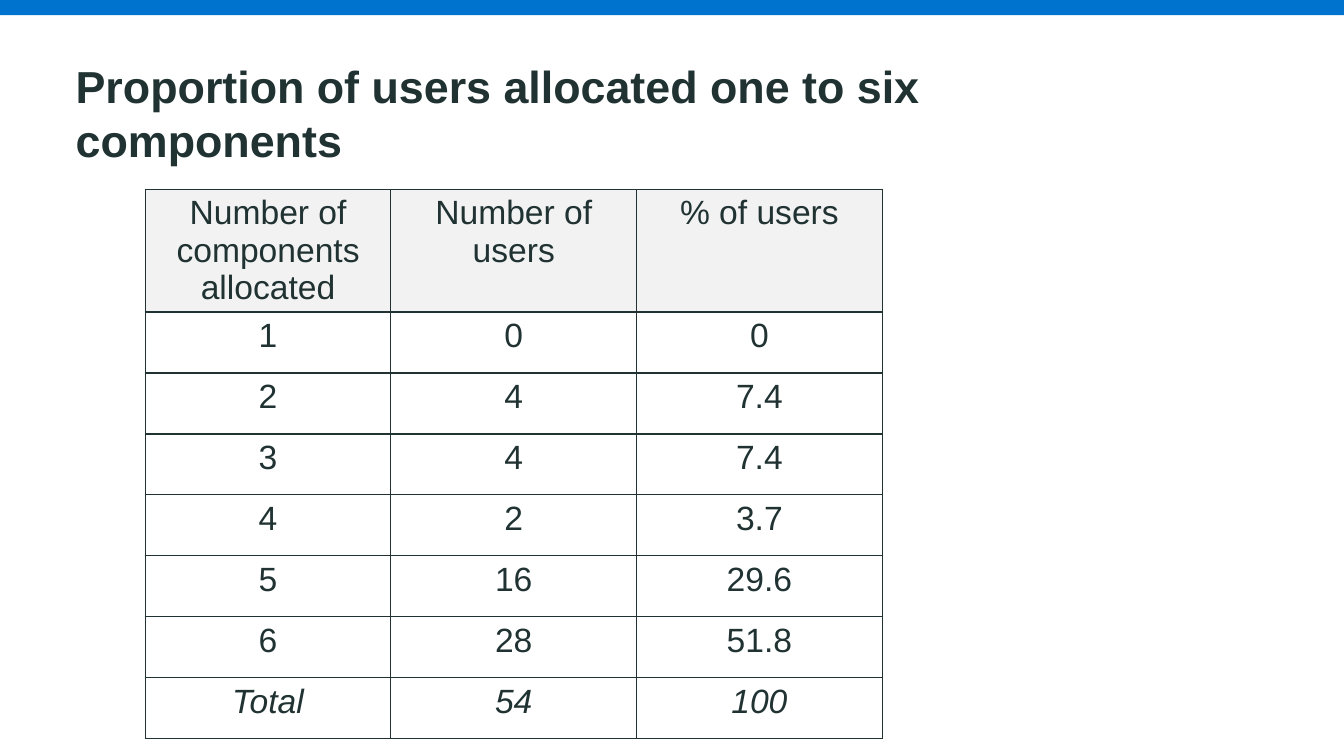
from pptx import Presentation
from pptx.dml.color import RGBColor
from pptx.enum.shapes import MSO_SHAPE
from pptx.enum.text import MSO_ANCHOR, PP_ALIGN
from pptx.oxml.ns import qn
from pptx.util import Inches, Pt
from lxml.etree import SubElement

# Content
TITLE = "Proportion of users allocated one to six components"
HEADINGS = ("Number of components allocated", "Number of users", "% of users")
ALLOCATIONS = [
    ("1", "0", "0"),
    ("2", "4", "7.4"),
    ("3", "4", "7.4"),
    ("4", "2", "3.7"),
    ("5", "16", "29.6"),
    ("6", "28", "51.8"),
]
TOTAL = ("Total", "54", "100")

COLORS = {"bar": "0073CF", "text": "203232", "heading": "F2F2F2"}
FONT = "Arial"


def color(name):
    return RGBColor.from_string(COLORS[name])


def style_font(font, size, bold=False, italic=False):
    font.name, font.size = FONT, Pt(size)
    font.bold, font.italic = bold, italic
    font.color.rgb = color("text")


def add_borders(cell):
    """Draw a 1 pt line on all four sides; call before setting the fill."""
    cell_props = cell._tc.get_or_add_tcPr()
    for side in ("a:lnL", "a:lnR", "a:lnT", "a:lnB"):
        line = SubElement(cell_props, qn(side), w=str(Pt(1)))
        solid = SubElement(line, qn("a:solidFill"))
        SubElement(solid, qn("a:srgbClr"), val=COLORS["text"])


prs = Presentation()
prs.slide_width, prs.slide_height = Inches(13.33), Inches(7.5)
slide = prs.slides.add_slide(prs.slide_layouts[5])

# Top bar
bar = slide.shapes.add_shape(MSO_SHAPE.RECTANGLE, 0, 0, prs.slide_width, Inches(0.15))
bar.shadow.inherit = False
bar.fill.solid()
bar.fill.fore_color.rgb = color("bar")
bar.line.fill.background()

# Title
title = slide.shapes.title
title.left, title.top = Inches(0.65), Inches(0.53)
title.width, title.height = Inches(8.89), Inches(1.18)
title.text_frame.text = TITLE
title.text_frame.word_wrap = True
title.text_frame.vertical_anchor = MSO_ANCHOR.MIDDLE
heading = title.text_frame.paragraphs[0]
heading.alignment = PP_ALIGN.LEFT
style_font(heading.runs[0].font, 32, bold=True)

# Allocation table, with equal rows and columns
rows = [HEADINGS, *ALLOCATIONS, TOTAL]
table = slide.shapes.add_table(
    len(rows), len(HEADINGS), Inches(1.44), Inches(1.88), Inches(7.31), Inches(4.84)
).table
table.first_row = table.horz_banding = False

for r, row in enumerate(rows):
    for c, value in enumerate(row):
        cell = table.cell(r, c)
        add_borders(cell)
        if row is HEADINGS:
            cell.fill.solid()
            cell.fill.fore_color.rgb = color("heading")
        else:
            cell.fill.background()
        cell.text_frame.text = value
        entry = cell.text_frame.paragraphs[0]
        entry.alignment = PP_ALIGN.CENTER
        style_font(entry.runs[0].font, 24, italic=row is TOTAL)

prs.save("out.pptx")
